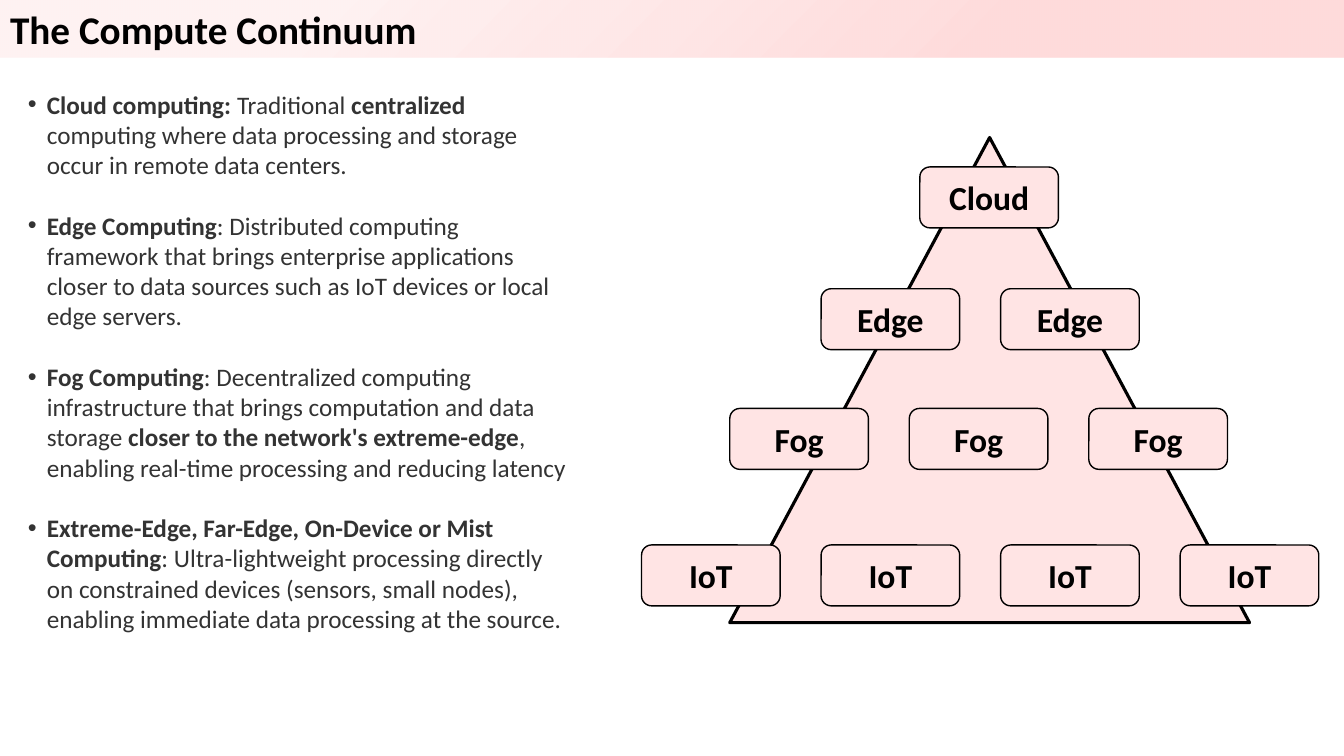
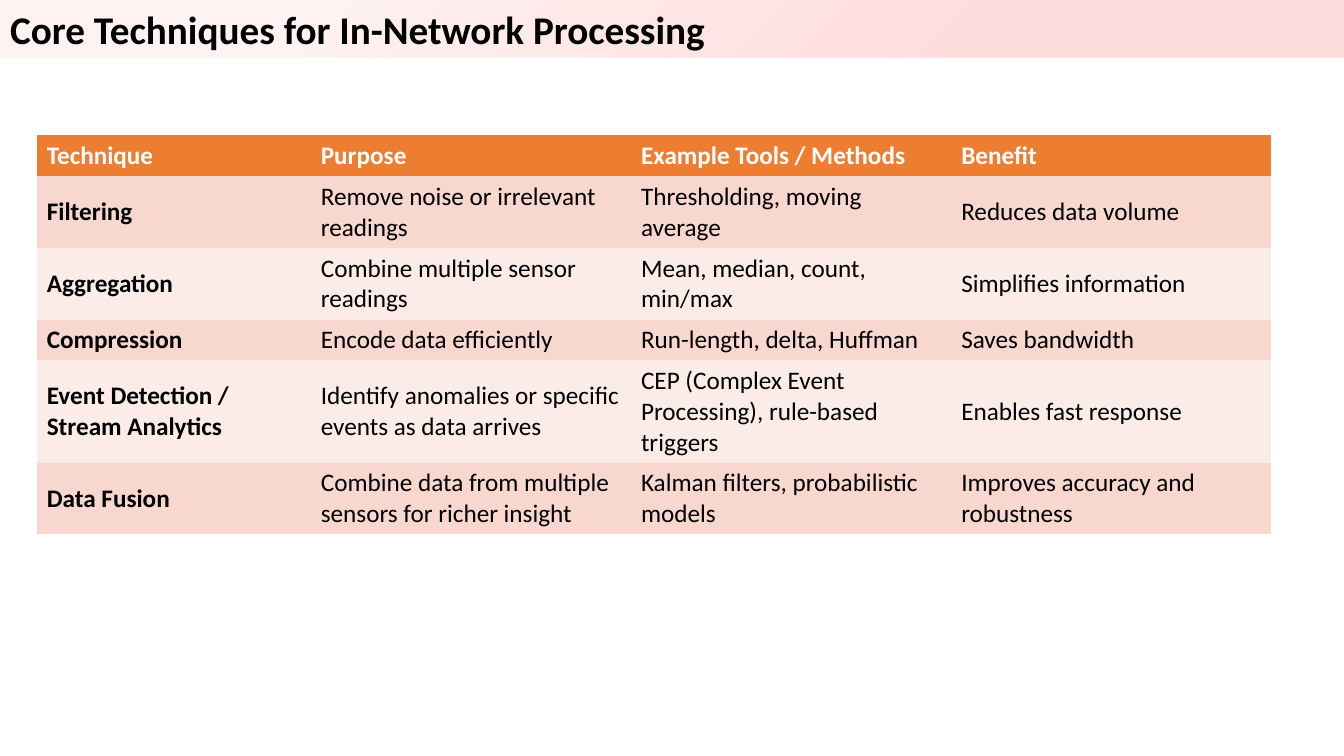
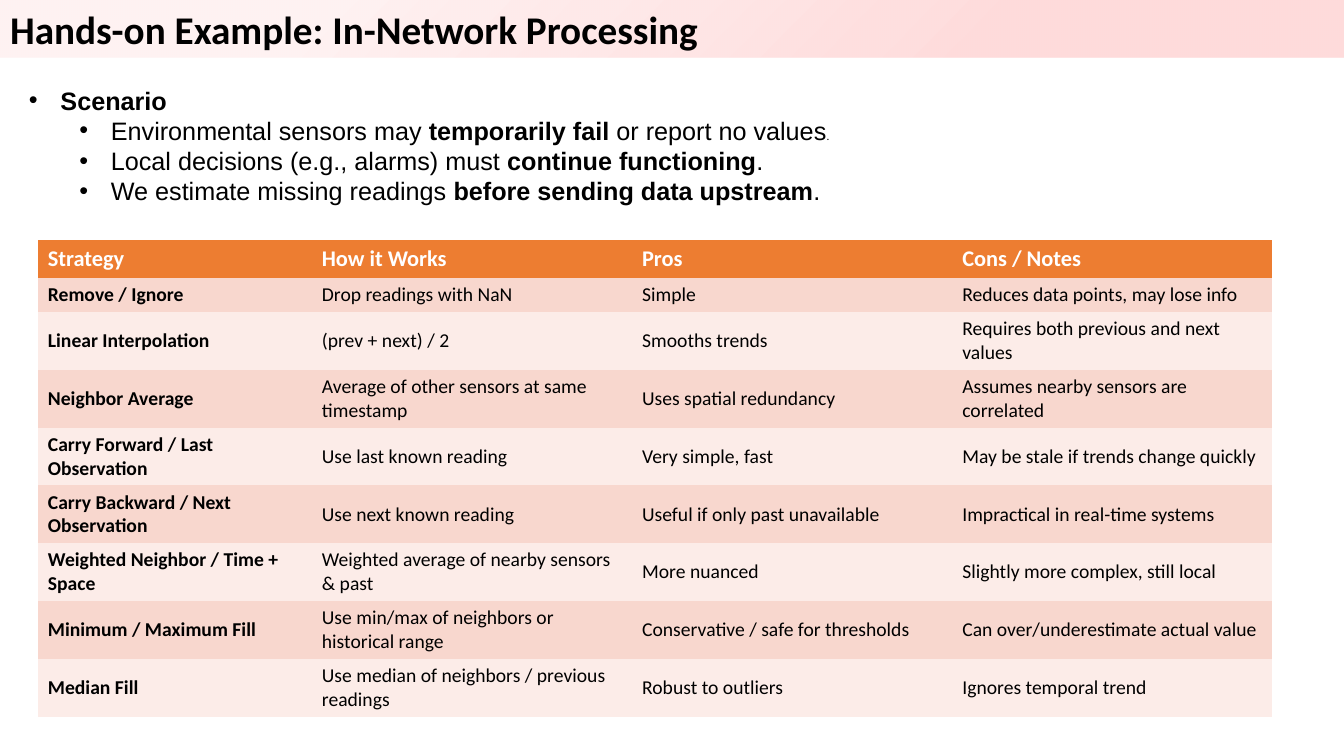
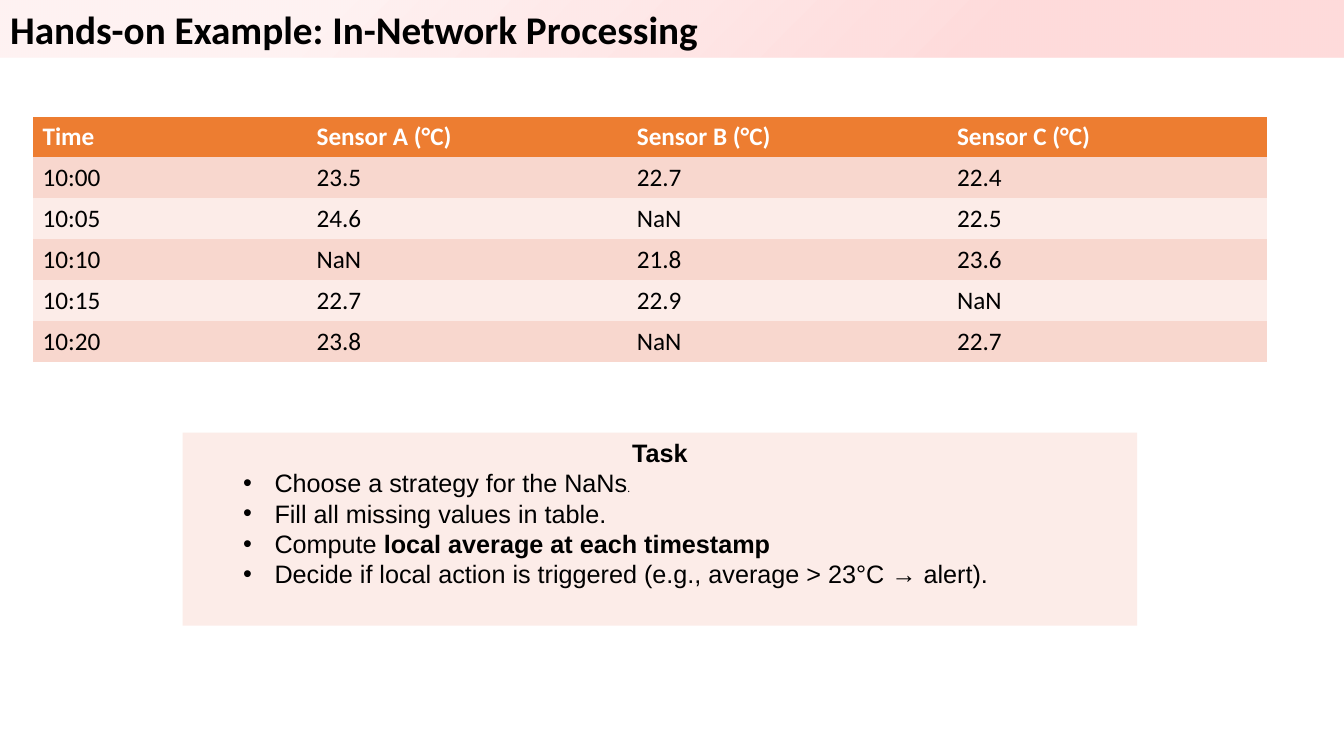
from lxml.etree import SubElement
from pptx import Presentation
from pptx.dml.color import RGBColor
from pptx.enum.shapes import MSO_SHAPE
from pptx.enum.text import MSO_ANCHOR, MSO_AUTO_SIZE, PP_ALIGN
from pptx.oxml import parse_xml
from pptx.oxml.ns import qn
from pptx.util import Pt

PX = 9525  # EMU in one px; the slide is 1280 x 720 px
BLACK, WHITE, GREY = "000000", "FFFFFF", "333333"
PINK, ORANGE = "FFE4E4", "ED7D31"
BANDS = ["FCECE8", "F8D7CE"]
NO_GRID_STYLE = "{2D5ABB26-0587-4C30-8999-92F81FD0307C}"
BAND_GRADIENT = """
<a:gradFill xmlns:a="http://schemas.openxmlformats.org/drawingml/2006/main" rotWithShape="1">
  <a:gsLst>
    <a:gs pos="26000"><a:srgbClr val="FF0000"><a:alpha val="14000"/></a:srgbClr></a:gs>
    <a:gs pos="76000"><a:srgbClr val="FF0000"><a:alpha val="5000"/></a:srgbClr></a:gs>
  </a:gsLst>
  <a:path path="circle"><a:fillToRect l="100000" t="100000"/></a:path>
</a:gradFill>"""


def color(value):
    return RGBColor.from_string(value)


def write(frame, texts, size=18, font="Calibri", ink=BLACK, bold=False, align=PP_ALIGN.LEFT,
          anchor=MSO_ANCHOR.TOP, level=0, margin=0, hang=0, line=None, gap=0):
    """Add paragraphs to a frame; ** switches bold, and a hang adds a bullet."""
    frame.word_wrap = True
    frame.auto_size = MSO_AUTO_SIZE.NONE
    frame.vertical_anchor = anchor
    for text in texts:
        first = not frame.text
        paragraph = frame.paragraphs[0] if first else frame.add_paragraph()
        paragraph.level = level
        if hang:
            properties = paragraph._p.get_or_add_pPr()
            properties.set("marL", str(margin * PX))
            properties.set("indent", str(-hang * PX))
            SubElement(properties, qn("a:buFont")).set("typeface", "Arial")
            SubElement(properties, qn("a:buChar")).set("char", "•")
        paragraph.alignment = align
        paragraph.space_before = Pt(0 if first else gap)
        if line:
            paragraph.line_spacing = Pt(line)
        for index, part in enumerate(text.split("**")):
            if part:
                run = paragraph.add_run()
                run.text = part
                run.font.size = Pt(size)
                run.font.name = font
                run.font.bold = bold or index % 2 == 1
                run.font.color.rgb = color(ink)


presentation = Presentation()
presentation.slide_width = 1280 * PX
presentation.slide_height = 720 * PX

# Slides with their title bands (layout 1: title and list, 5: title only)
slides = []
for title_text, layout in [
    ("The Compute Continuum", 1),
    ("Core Techniques for In-Network Processing", 5),
    ("Hands-on Example: In-Network Processing", 1),
    ("Hands-on Example: In-Network Processing", 5),
]:
    slide = presentation.slides.add_slide(presentation.slide_layouts[layout])
    title = slide.shapes.title
    title.left, title.top, title.width, title.height = 0, 0, 1280 * PX, 55 * PX
    title._element.spPr.append(parse_xml(BAND_GRADIENT))
    write(title.text_frame, [title_text], size=28, bold=True)
    slides.append(slide)
continuum, techniques, scenario, task = slides

# Continuum: definitions
body = continuum.placeholders[1]
body.left, body.top, body.width, body.height = 17 * PX, 80 * PX, 533 * PX, 563 * PX
write(body.text_frame, [
    "**Cloud computing: **Traditional **centralized** computing where data processing and "
    "storage occur in remote data centers.",
    "**Edge Computing**: Distributed computing framework that brings enterprise applications "
    "closer to data sources such as IoT devices or local edge servers.",
    "**Fog Computing**: Decentralized computing infrastructure that brings computation and data "
    "storage **closer to the network's extreme-edge**, enabling real-time processing and "
    "reducing latency",
    "**Extreme-Edge, Far-Edge, On-Device or Mist Computing**: Ultra-lightweight processing "
    "directly on constrained devices (sensors, small nodes), enabling immediate data processing "
    "at the source.",
], ink=GREY, margin=18, hang=18, line=21.6, gap=21.6)

# Continuum: pyramid with one more box on each tier
pyramid = [(MSO_SHAPE.ISOSCELES_TRIANGLE, 695, 131, 495, 462, 2.25, "")]
for count, (name, left, top) in enumerate(
        [("Cloud", 876, 159), ("Edge", 782, 275), ("Fog", 695, 389), ("IoT", 611, 519)], 1):
    for column in range(count):
        pyramid.append((MSO_SHAPE.ROUNDED_RECTANGLE, left + 171 * column, top, 132, 58, 1, name))
for kind, left, top, width, height, weight, name in pyramid:
    shape = continuum.shapes.add_shape(kind, left * PX, top * PX, width * PX, height * PX)
    shape.shadow.inherit = False
    shape.fill.solid()
    shape.fill.fore_color.rgb = color(PINK)
    shape.line.color.rgb = color(BLACK)
    shape.line.width = Pt(weight)
    if name:
        write(shape.text_frame, [name], size=24, bold=True, align=PP_ALIGN.CENTER,
              anchor=MSO_ANCHOR.MIDDLE)

# Table contents
technique_rows = [
    ("Technique", "Purpose", "Example Tools / Methods", "Benefit"),
    ("Filtering", "Remove noise or irrelevant readings", "Thresholding, moving average",
     "Reduces data volume"),
    ("Aggregation", "Combine multiple sensor readings", "Mean, median, count, min/max",
     "Simplifies information"),
    ("Compression", "Encode data efficiently", "Run-length, delta, Huffman", "Saves bandwidth"),
    ("Event Detection / Stream Analytics", "Identify anomalies or specific events as data arrives",
     "CEP (Complex Event Processing), rule-based triggers", "Enables fast response"),
    ("Data Fusion", "Combine data from multiple sensors for richer insight",
     "Kalman filters, probabilistic models", "Improves accuracy and robustness"),
]
strategy_rows = [
    ("Strategy", "How it Works", "Pros", "Cons / Notes"),
    ("Remove / Ignore", "Drop readings with NaN", "Simple", "Reduces data points, may lose info"),
    ("Linear Interpolation", "(prev + next) / 2", "Smooths trends",
     "Requires both previous and next values"),
    ("Neighbor Average", "Average of other sensors at same timestamp", "Uses spatial redundancy",
     "Assumes nearby sensors are correlated"),
    ("Carry Forward / Last Observation", "Use last known reading", "Very simple, fast",
     "May be stale if trends change quickly"),
    ("Carry Backward / Next Observation", "Use next known reading",
     "Useful if only past unavailable", "Impractical in real-time systems"),
    ("Weighted Neighbor / Time + Space", "Weighted average of nearby sensors & past",
     "More nuanced", "Slightly more complex, still local"),
    ("Minimum / Maximum Fill", "Use min/max of neighbors or historical range",
     "Conservative / safe for thresholds", "Can over/underestimate actual value"),
    ("Median Fill", "Use median of neighbors / previous readings", "Robust to outliers",
     "Ignores temporal trend"),
]
reading_rows = [
    ("Time", "Sensor A (°C)", "Sensor B (°C)", "Sensor C (°C)"),
    ("10:00", "23.5", "22.7", "22.4"),
    ("10:05", "24.6", "NaN", "22.5"),
    ("10:10", "NaN", "21.8", "23.6"),
    ("10:15", "22.7", "22.9", "NaN"),
    ("10:20", "23.8", "NaN", "22.7"),
]

# Tables: rows start at their least height and grow with their text
for slide, rows, left, top, height, header_size, cell_size, bold_names in [
    (techniques, technique_rows, 35, 129, 374, 18, 18, True),
    (scenario, strategy_rows, 36, 229, 448, 16, 14, True),
    (task, reading_rows, 31, 111, 230, 18, 18, False),
]:
    table_frame = slide.shapes.add_table(len(rows), 4, left * PX, top * PX, 1176 * PX, height * PX)
    table = table_frame.table
    table._tbl.tblPr.find(qn("a:tableStyleId")).text = NO_GRID_STYLE
    for column, width in zip(table.columns, [261, 305, 305, 305]):
        column.width = width * PX
    for row_index, texts in enumerate(rows):
        table.rows[row_index].height = 31 * PX
        header = row_index == 0
        for column_index, text in enumerate(texts):
            cell = table.cell(row_index, column_index)
            cell.fill.solid()
            cell.fill.fore_color.rgb = color(ORANGE if header else BANDS[row_index % 2])
            cell.vertical_anchor = MSO_ANCHOR.MIDDLE
            write(cell.text_frame, [text], size=header_size if header else cell_size,
                  ink=WHITE if header else BLACK, anchor=MSO_ANCHOR.MIDDLE,
                  bold=header or (bold_names and column_index == 0))
    table_frame.height = height * PX

# Scenario list and task box
body = scenario.placeholders[1]
body.left, body.top, body.width, body.height = 18 * PX, 76 * PX, 789 * PX, 154 * PX
box = task.shapes.add_shape(MSO_SHAPE.RECTANGLE, 174 * PX, 412 * PX, 909 * PX, 184 * PX)
box.shadow.inherit = False
box.fill.solid()
box.fill.fore_color.rgb = color(BANDS[0])
box.line.fill.background()

write(body.text_frame, ["Scenario"], font="Arial", bold=True, margin=30, hang=30, line=21.6)
write(box.text_frame, ["Task"], font="Arial", bold=True, align=PP_ALIGN.CENTER, line=21.6)
for shape, items in [
    (body, ["Environmental sensors may **temporarily fail** or report no values",
            "Local decisions (e.g., alarms) must **continue functioning**.",
            "We estimate missing readings **before sending data upstream**."]),
    (box, ["Choose a strategy for the NaNs",
           "Fill all missing values in table.",
           "Compute **local average at each timestamp**",
           "Decide if local action is triggered (e.g., average > 23°C → alert)."]),
]:
    write(shape.text_frame, items, font="Arial", level=1, margin=78, hang=30, line=21.6)
    # The first item ends in a small full stop
    full_stop = shape.text_frame.paragraphs[1].add_run()
    full_stop.text = "."
    full_stop.font.size = Pt(8)
    full_stop.font.name = "Calibri"
    full_stop.font.bold = False
    full_stop.font.color.rgb = color(BLACK)

presentation.save("out.pptx")
